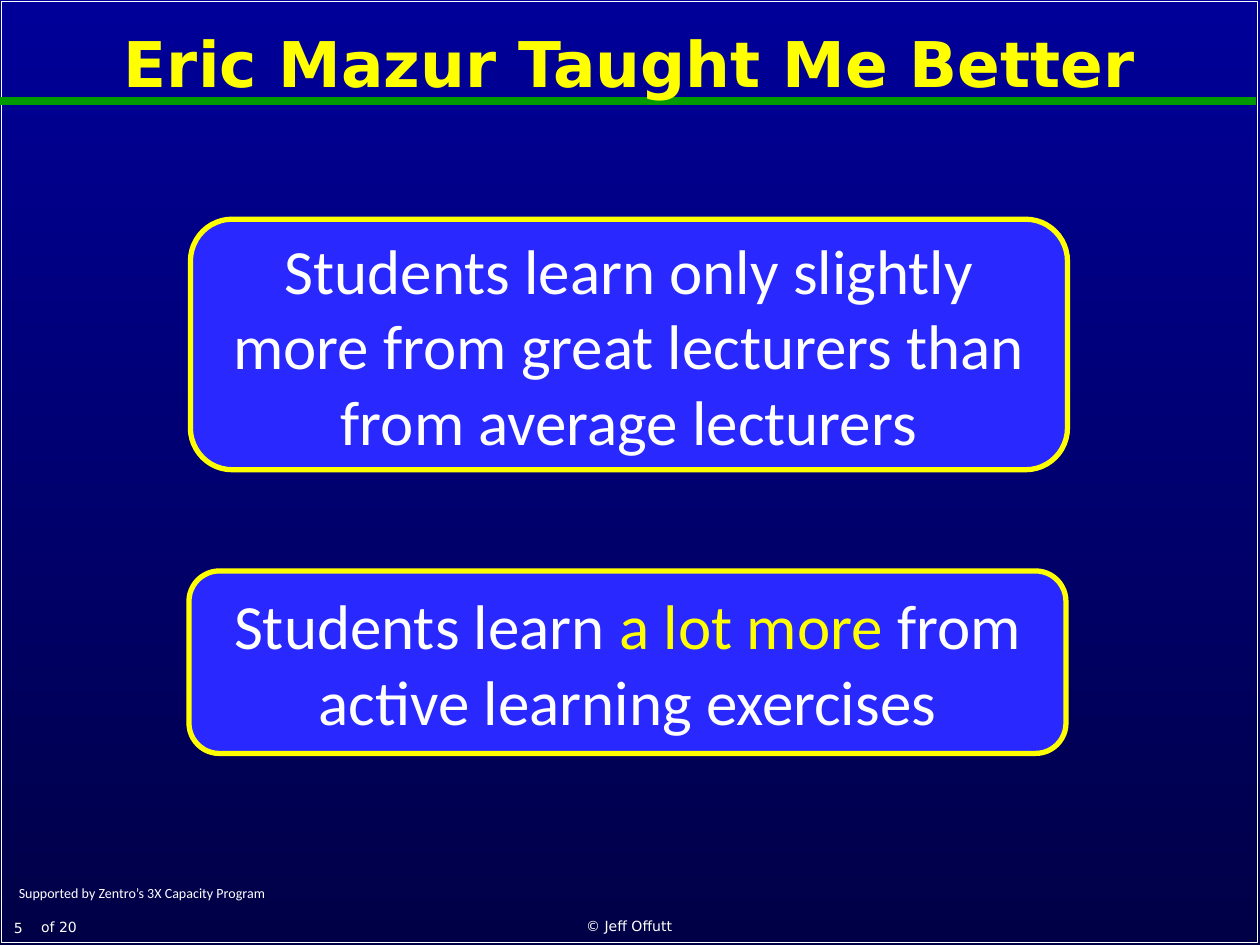
from lxml import etree
from pptx import Presentation
from pptx.dml.color import RGBColor
from pptx.enum.shapes import MSO_CONNECTOR, MSO_SHAPE
from pptx.enum.text import MSO_ANCHOR, PP_ALIGN
from pptx.oxml.ns import qn
from pptx.util import Cm, Pt

RECTANGLE, ROUNDED = MSO_SHAPE.RECTANGLE, MSO_SHAPE.ROUNDED_RECTANGLE
STRAIGHT = MSO_CONNECTOR.STRAIGHT
TOP, MIDDLE, BOTTOM = MSO_ANCHOR.TOP, MSO_ANCHOR.MIDDLE, MSO_ANCHOR.BOTTOM
LEFT, CENTER = PP_ALIGN.LEFT, PP_ALIGN.CENTER

WHITE = RGBColor(0xFF, 0xFF, 0xFF)
YELLOW = RGBColor(0xFF, 0xFF, 0x00)
GREEN = RGBColor(0x00, 0x99, 0x00)
BRIGHT_BLUE = RGBColor(0x29, 0x29, 0xFF)
TOP_BLUE = RGBColor(0x00, 0x00, 0x99)
BOTTOM_BLUE = RGBColor(0x00, 0x00, 0x47)

TITLE_FONT = {"name": "DejaVu Sans", "size": Pt(36), "bold": True}
CARD_FONT = {"name": "Calibri", "size": Pt(36)}
FOOTER_FONT = {"name": "DejaVu Sans", "size": Pt(8)}
SUPPORT_FONT = {"name": "Calibri", "size": Pt(8)}

FRAME_WIDTH = 25.32

CARDS = [
    ((3.84, 4.42, 17.68, 5.05),
     [("Students learn only slightly more from great lecturers than "
       "from average lecturers", WHITE)]),
    ((3.81, 11.51, 17.68, 3.68),
     [("Students learn ", WHITE), ("a lot more ", YELLOW),
      ("from active learning exercises", WHITE)]),
]

FOOTERS = [
    ((0.58, 18.39, 1.6, 0.61), "of 20", FOOTER_FONT, LEFT, TOP),
    ((0.13, 17.7, 5.72, 0.61), "Supported by Zentro’s 3X Capacity Program",
     SUPPORT_FONT, LEFT, TOP),
    ((8.66, 18.24, 8.05, 0.71), "© Jeff Offutt", FOOTER_FONT, CENTER, BOTTOM),
    ((0.03, 18.26, 5.03, 0.74), "5", FOOTER_FONT, LEFT, BOTTOM),
]


def in_cm(place):
    return [Cm(length) for length in place]


def paint_background(page):
    fill = page.background.fill
    fill.gradient()
    fill.gradient_angle = 270
    for stop, color in zip(fill.gradient_stops, (TOP_BLUE, BOTTOM_BLUE)):
        stop.color.rgb = color


def write_text(box, spans, font, align, anchor, line_spacing=None):
    frame = box.text_frame
    frame.word_wrap = True
    frame.vertical_anchor = anchor
    para = frame.paragraphs[0]
    para.alignment = align
    para.line_spacing = line_spacing
    for text, color in spans:
        span = para.add_run()
        span.text = text
        for key, value in font.items():
            setattr(span.font, key, value)
        span.font.color.rgb = color


def add_text(page, place, spans, font, align, anchor, line_spacing=None):
    box = page.shapes.add_textbox(*in_cm(place))
    write_text(box, spans, font, align, anchor, line_spacing)


def add_outlined(page, preset, place, line_color, line_width, fill_color=None):
    shape = page.shapes.add_shape(preset, *in_cm(place))
    shape.shadow.inherit = False
    if fill_color is None:
        shape.fill.background()
    else:
        shape.fill.solid()
        shape.fill.fore_color.rgb = fill_color
    shape.line.color.rgb = line_color
    shape.line.width = Pt(line_width)
    return shape


def add_rule(page, top):
    rule = page.shapes.add_connector(STRAIGHT, *in_cm((0, top, FRAME_WIDTH, top)))
    rule.line.color.rgb = GREEN
    rule.line.width = Pt(4.5)
    etree.SubElement(rule._element.spPr, qn("a:effectLst"))


def add_card(page, place, spans):
    card = add_outlined(page, ROUNDED, place, YELLOW, 3, BRIGHT_BLUE)
    write_text(card, spans, CARD_FONT, CENTER, MIDDLE)


def main():
    deck = Presentation()
    deck.slide_width, deck.slide_height = Cm(25.4), Cm(19.05)
    page = deck.slides.add_slide(deck.slide_layouts[6])
    paint_background(page)
    add_outlined(page, RECTANGLE, (0.03, 0.03, FRAME_WIDTH, 18.97), WHITE, 1)
    add_rule(page, 2.03)
    add_text(page, (0.03, 0.28, FRAME_WIDTH, 2.13),
             [("Eric Mazur Taught Me Better", YELLOW)],
             TITLE_FONT, CENTER, MIDDLE, 0.9)
    for place, text, font, align, anchor in FOOTERS:
        add_text(page, place, [(text, WHITE)], font, align, anchor)
    for place, spans in CARDS:
        add_card(page, place, spans)
    deck.save("out.pptx")


if __name__ == "__main__":
    main()
